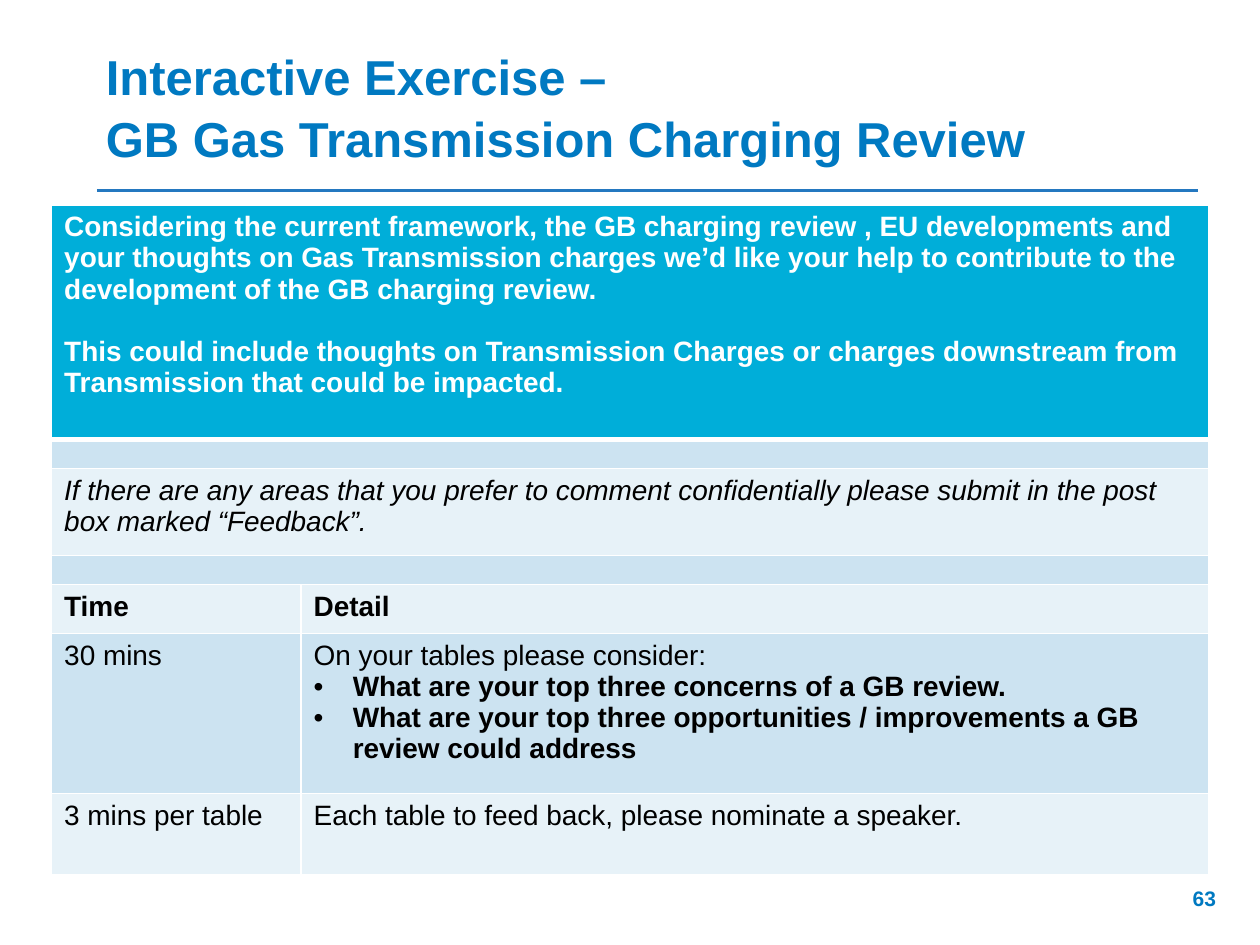
from pptx import Presentation
from pptx.dml.color import RGBColor
from pptx.enum import shapes, text
from pptx.oxml.ns import qn
from pptx.util import Inches, Pt
from lxml import etree

# Content: a row is (height, cells); a paragraph is (wording, style)
TITLE = "Interactive Exercise –\vGB Gas Transmission Charging Review"
PAGE = "63"
ROWS = [
    (1.86, [[("Considering the current framework, the GB charging review , EU developments and "
              "your thoughts on Gas Transmission charges we’d like your help to contribute to "
              "the development of the GB charging review.", "bold"),
             ("This could include thoughts on Transmission Charges or charges downstream from "
              "Transmission that could be impacted.", "bold spaced")]]),
    (0.23, [[]]),
    (0.69, [[("If there are any areas that you prefer to comment confidentially please submit "
              "in the post box marked “Feedback”.", "italic")]]),
    (0.23, [[]]),
    (0.39, [[("Time", "bold")], [("Detail", "bold")]]),
    (1.27, [[("30 mins", "")],
            [("On your tables please consider:", ""),
             ("What are your top three concerns of a GB review.", "bold bullet"),
             ("What are your top three opportunities / improvements a GB review could address",
              "bold bullet")]]),
    (0.64, [[("3 mins per table", "")],
            [("Each table to feed back, please nominate a speaker.", "")]]),
]
COLUMNS = [1.98, 7.2]
THEME = {
    "font": "Arial", "title_size": 28, "body_size": 16, "page_size": 12, "gap_size": 6,
    "blue": "0079C1", "rule": "2478C0", "header": "00AED9",
    "bands": ["E7F2F8", "CCE3F1"], "white": "FFFFFF", "black": "000000",
}


def style(paragraph, size, color, bold=False, italic=False):
    for run in paragraph.runs:
        font = run.font
        font.name, font.size = THEME["font"], Pt(size)
        font.bold, font.italic = bold, italic
        font.color.rgb = RGBColor.from_string(color)


def add_bullet(paragraph):
    props = paragraph._p.get_or_add_pPr()
    props.set("marL", str(Inches(0.31)))
    props.set("indent", str(-Inches(0.31)))
    etree.SubElement(props, qn("a:buFont"), typeface=THEME["font"])
    etree.SubElement(props, qn("a:buChar"), char="•")


def set_borders(cell, top, bottom):
    props = cell._tc.get_or_add_tcPr()
    for place, (side, width) in enumerate([("L", 1), ("R", 1), ("T", top), ("B", bottom)]):
        edge = etree.Element(qn("a:ln" + side), w=str(Pt(width)))
        fill = etree.SubElement(edge, qn("a:solidFill"))
        etree.SubElement(fill, qn("a:srgbClr"), val=THEME["white"])
        props.insert(place, edge)


def fill_cell(cell, content, color):
    frame = cell.text_frame
    frame.text = "\n".join(wording for wording, _ in content)
    for paragraph, (_, look) in zip(frame.paragraphs, content):
        if "bullet" in look:
            add_bullet(paragraph)
        if "spaced" in look:
            paragraph.space_before = Pt(18)
        style(paragraph, THEME["body_size"], color, "bold" in look, "italic" in look)
    if not content:  # keeps the spacer rows thin
        etree.SubElement(frame.paragraphs[0]._p, qn("a:endParaRPr"),
                         sz=str(THEME["gap_size"] * 100))


deck = Presentation()
deck.slide_width, deck.slide_height = Inches(10), Inches(7.5)
slide = deck.slides.add_slide(deck.slide_layouts[5])

# Rule under the title
rule = slide.shapes.add_connector(shapes.MSO_CONNECTOR.STRAIGHT,
                                  Inches(0.77), Inches(1.51), Inches(9.51), Inches(1.51))
rule.line.color.rgb = RGBColor.from_string(THEME["rule"])
rule.line.width = Pt(1.5)
etree.SubElement(rule._element.spPr, qn("a:effectLst"))

# Title
title = slide.shapes.title
title.left, title.top, title.width, title.height = map(Inches, (0.74, 0.34, 8.83, 1.04))
title.text_frame.text = TITLE
title.text_frame.word_wrap = True
title.text_frame.auto_size = text.MSO_AUTO_SIZE.NONE
title.text_frame.vertical_anchor = text.MSO_ANCHOR.BOTTOM
heading = title.text_frame.paragraphs[0]
heading.alignment = text.PP_ALIGN.LEFT
heading.line_spacing = 1.05
style(heading, THEME["title_size"], THEME["blue"], bold=True)

# Exercise table
exercise = slide.shapes.add_table(
    len(ROWS), len(COLUMNS), Inches(0.41), Inches(1.63), Inches(sum(COLUMNS)),
    Inches(sum(height for height, _ in ROWS))).table
for column, width in zip(exercise.columns, COLUMNS):
    column.width = Inches(width)
for r, (height, cells) in enumerate(ROWS):
    exercise.rows[r].height = Inches(height)
    if len(cells) == 1:
        exercise.cell(r, 0).merge(exercise.cell(r, 1))
    for c in range(len(COLUMNS)):
        cell = exercise.cell(r, c)
        cell.fill.solid()
        cell.fill.fore_color.rgb = RGBColor.from_string(
            THEME["bands"][r % 2] if r else THEME["header"])
        set_borders(cell, top=3 if r == 1 else 1, bottom=1 if r else 3)
        fill_cell(cell, cells[c] if c < len(cells) else [],
                  THEME["black"] if r else THEME["white"])

# Page number
page = slide.shapes.add_textbox(Inches(7.42), Inches(6.98), Inches(2.33), Inches(0.4)).text_frame
page.word_wrap = True
page.text = PAGE
page.paragraphs[0].alignment = text.PP_ALIGN.RIGHT
style(page.paragraphs[0], THEME["page_size"], THEME["blue"], bold=True)

deck.save("out.pptx")
